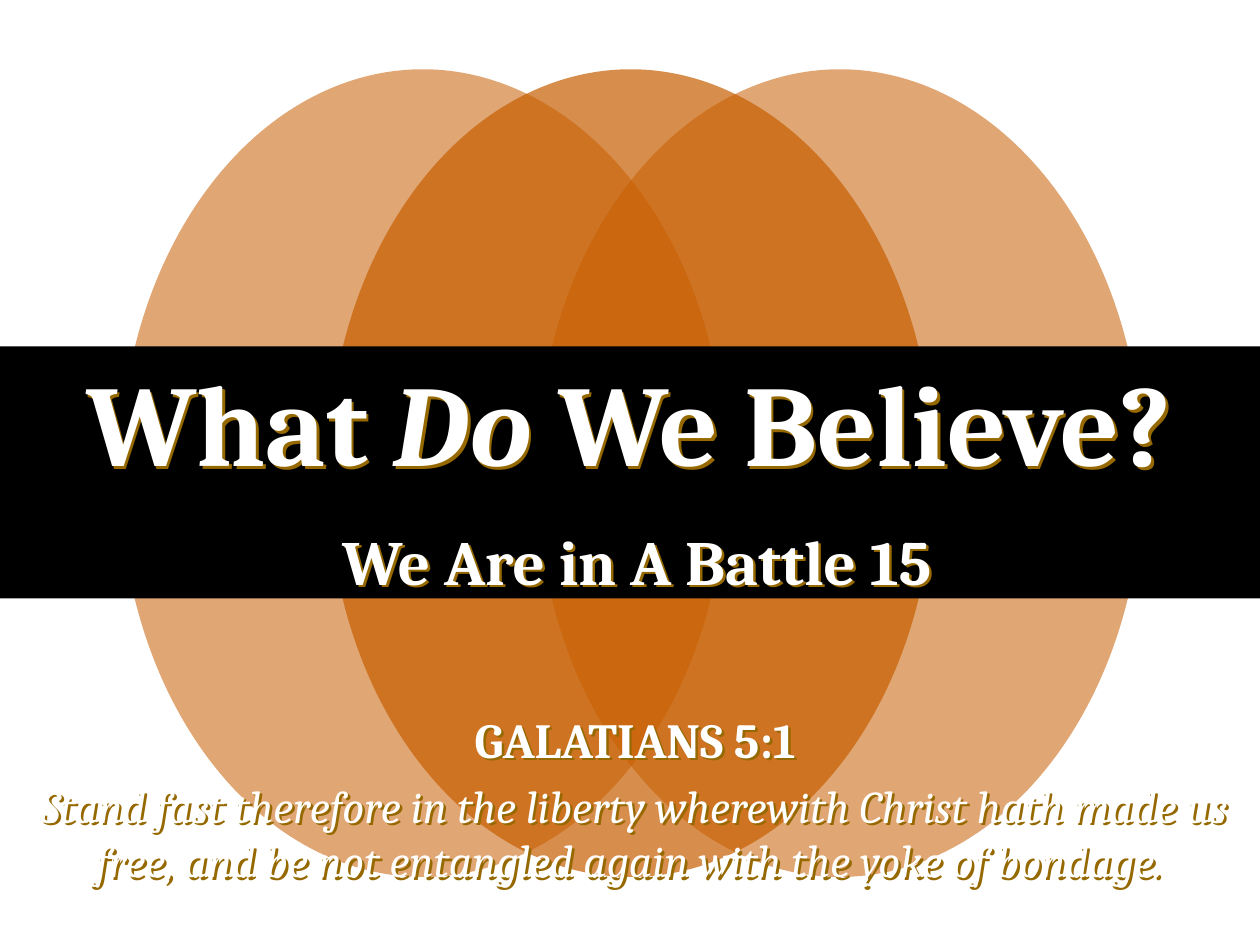
"""Build the title slide with three overlapping ellipses behind a black band."""
from dataclasses import dataclass

import pptx
import pptx.dml.color
import pptx.enum.shapes
import pptx.enum.text
import pptx.oxml.ns
import pptx.util
from lxml import etree

Inches = pptx.util.Inches
Pt = pptx.util.Pt
qn = pptx.oxml.ns.qn
Shapes = pptx.enum.shapes.MSO_SHAPE
Anchor = pptx.enum.text.MSO_ANCHOR

COLOURS = {"orange": "C75E00", "band": "000000", "text": "FFFFFF", "shadow": "966900"}
FONT = "Cambria"


@dataclass
class Ellipse:
    left: float
    opacity: int


@dataclass
class Run:
    text: str
    size: float
    bold: bool = True
    italic: bool = False


@dataclass
class Paragraph:
    runs: list[Run]
    space_before: float = 0
    line_spacing: float = 1.0
    indent: float = 0


@dataclass
class TextBlock:
    left: float
    top: float
    width: float
    height: float
    anchor: Anchor
    paragraphs: list[Paragraph]


ELLIPSES = [Ellipse(0.95, 55), Ellipse(4.26, 55), Ellipse(2.6, 70)]

TITLE = TextBlock(0.08, 3.08, 9.83, 1.51, Anchor.MIDDLE, [
    Paragraph([Run("What ", 65.7), Run("Do", 65.7, italic=True), Run(" We Believe?", 65.7)],
              line_spacing=0.9),
    Paragraph([Run("We Are in A Battle 15", 36)], space_before=22.5, line_spacing=0.9, indent=0.12),
])

VERSE = TextBlock(0.08, 5.58, 9.92, 0.83, Anchor.TOP, [
    Paragraph([Run("GALATIANS 5:1", 28)]),
    Paragraph([Run("Stand fast therefore in the liberty wherewith Christ hath made us free, "
                   "and be not entangled again with the yoke of bondage. ", 26, False, True)],
              space_before=5.5),
])


def colour(name: str) -> pptx.dml.color.RGBColor:
    """Return the named colour."""
    return pptx.dml.color.RGBColor.from_string(COLOURS[name])


def add_filled(shapes, kind, left: float, top: float, width: float, height: float, fill: str):
    """Add a borderless filled shape."""
    shape = shapes.add_shape(kind, Inches(left), Inches(top), Inches(width), Inches(height))
    shape.shadow.inherit = False
    shape.fill.solid()
    shape.fill.fore_color.rgb = colour(fill)
    shape.line.fill.background()
    return shape


def add_ellipse(shapes, ellipse: Ellipse) -> None:
    """Add one translucent ellipse."""
    shape = add_filled(shapes, Shapes.OVAL, ellipse.left, 0.55, 4.81, 6.41, "orange")
    fill = shape._element.spPr.find(".//" + qn("a:srgbClr"))
    etree.SubElement(fill, qn("a:alpha"), val=str(ellipse.opacity * 1000))


def add_text_shadow(shape) -> None:
    """Give the text of an unfilled box a small gold shadow."""
    shape.fill.background()
    shape.shadow.inherit = False
    effects = shape._element.spPr.find(qn("a:effectLst"))
    shadow = etree.SubElement(effects, qn("a:outerShdw"), blurRad="0", dist=str(Pt(2)),
                              dir="2700000", algn="tl", rotWithShape="0")
    etree.SubElement(shadow, qn("a:srgbClr"), val=COLOURS["shadow"])


def add_text(slide, block: TextBlock) -> None:
    """Add a centred text box run by run."""
    shape = slide.shapes.add_textbox(Inches(block.left), Inches(block.top),
                                     Inches(block.width), Inches(block.height))
    add_text_shadow(shape)
    frame = shape.text_frame
    frame.word_wrap = True
    frame.vertical_anchor = block.anchor
    for index, content in enumerate(block.paragraphs):
        paragraph = frame.add_paragraph() if index else frame.paragraphs[0]
        paragraph.alignment = pptx.enum.text.PP_ALIGN.CENTER
        paragraph.line_spacing = content.line_spacing
        if content.space_before:
            paragraph.space_before = Pt(content.space_before)
        if content.indent:
            paragraph._p.get_or_add_pPr().set("marL", str(Inches(content.indent)))
        for item in content.runs:
            run = paragraph.add_run()
            run.text = item.text
            run.font.name = FONT
            run.font.size = Pt(item.size)
            run.font.bold = item.bold
            run.font.italic = item.italic
            run.font.color.rgb = colour("text")


def main() -> None:
    """Build and save the presentation."""
    presentation = pptx.Presentation()
    presentation.slide_width = Inches(10)
    presentation.slide_height = Inches(7.5)
    slide = presentation.slides.add_slide(presentation.slide_layouts[6])
    group = slide.shapes.add_group_shape()
    for ellipse in ELLIPSES:
        add_ellipse(group.shapes, ellipse)
    add_filled(slide.shapes, Shapes.RECTANGLE, 0, 2.75, 10, 2, "band")
    for block in (TITLE, VERSE):
        add_text(slide, block)
    presentation.save("out.pptx")


if __name__ == "__main__":
    main()
